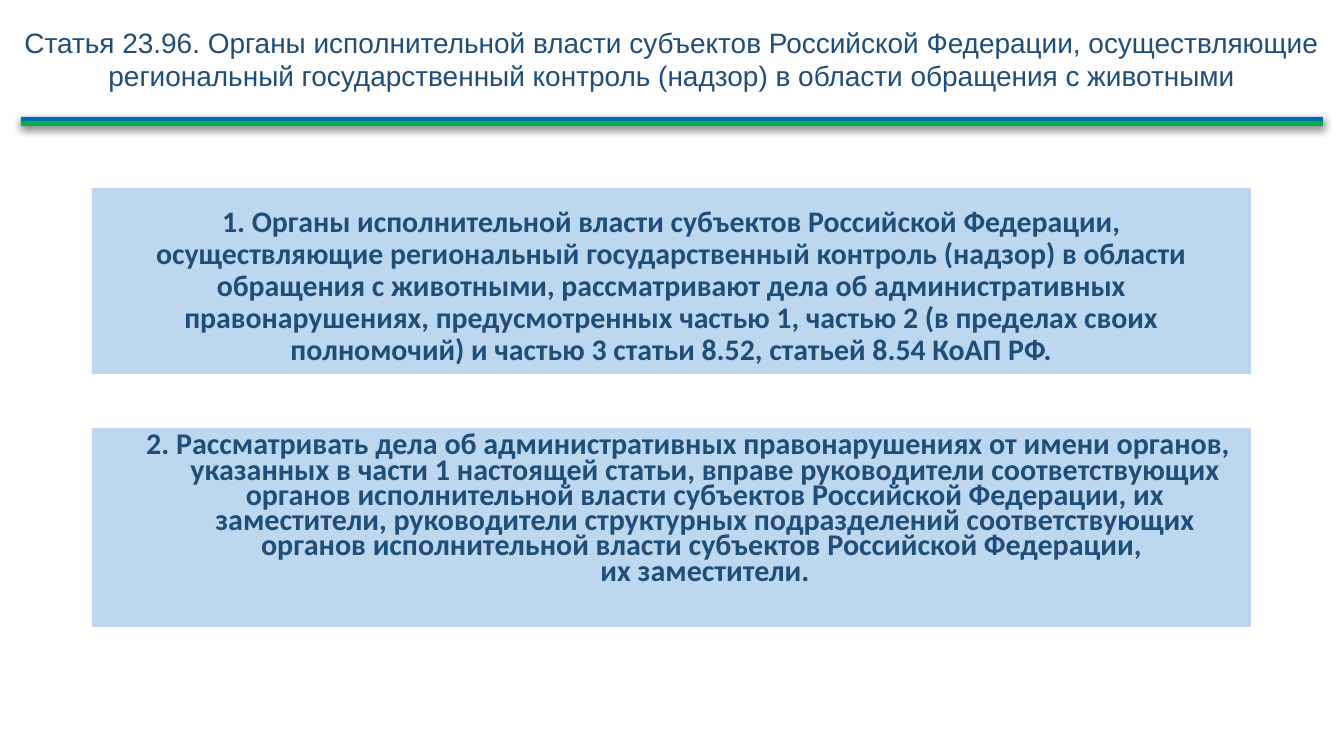
from lxml.etree import SubElement
from pptx import Presentation
from pptx.dml.color import RGBColor
from pptx.enum.shapes import MSO_SHAPE
from pptx.enum.text import MSO_ANCHOR, PP_ALIGN
from pptx.oxml.ns import qn
from pptx.util import Pt

EMU_PER_PX = 914400 / 134.4
NAVY = RGBColor(0x1F, 0x4E, 0x79)
PALE_BLUE = RGBColor(0xBD, 0xD7, 0xEE)
BLUE = RGBColor(0x00, 0x70, 0xC0)
GREEN = RGBColor(0x00, 0xB0, 0x50)

HEADING = (
    "Статья 23.96. Органы исполнительной власти субъектов Российской Федерации, "
    "осуществляющие региональный государственный контроль (надзор) "
    "в области обращения с животными"
)
AUTHORITIES = (
    "1. Органы исполнительной власти субъектов Российской Федерации, "
    "осуществляющие региональный государственный контроль (надзор) в области "
    "обращения с животными, рассматривают дела об административных "
    "правонарушениях, предусмотренных частью 1, частью 2 (в пределах своих "
    "полномочий) и частью 3 статьи 8.52, статьей 8.54 КоАП РФ."
)
OFFICIALS = (
    "2. Рассматривать дела об административных правонарушениях от имени органов, "
    "указанных в части 1 настоящей статьи, вправе руководители соответствующих "
    "органов исполнительной власти субъектов Российской Федерации, их "
    "заместители, руководители структурных подразделений соответствующих "
    "органов исполнительной власти субъектов Российской Федерации, \v"
    "их заместители."
)


def px(length):
    """Turn pixels into EMU."""
    return round(length * EMU_PER_PX)


def write(holder, text, *, size, font="Calibri", bold=True, anchor=MSO_ANCHOR.TOP,
          spacing=1.0, before=0, margin=0, indent=0):
    """Fill a shape with one centred navy paragraph."""
    frame = holder.text_frame
    frame.word_wrap = True
    frame.vertical_anchor = anchor
    paragraph = frame.paragraphs[0]
    paragraph.text = text
    paragraph.alignment = PP_ALIGN.CENTER
    paragraph.line_spacing = spacing
    paragraph.space_before = Pt(before)
    properties = paragraph._p.get_or_add_pPr()
    properties.set("marL", str(px(margin)))
    properties.set("indent", str(px(indent)))
    for run in paragraph.runs:
        run.font.size = Pt(size)
        run.font.name = font
        run.font.bold = bold
        run.font.color.rgb = NAVY


def add_block(shapes, left, top, width, height, color):
    """Add a plain filled rectangle."""
    block = shapes.add_shape(MSO_SHAPE.RECTANGLE, px(left), px(top), px(width), px(height))
    block.shadow.inherit = False
    block.fill.solid()
    block.fill.fore_color.rgb = color
    block.line.fill.background()
    return block


def cast_shadow(block):
    """Give a block a soft shadow straight below it."""
    effects = block._element.spPr.find(qn("a:effectLst"))
    shadow = SubElement(effects, qn("a:outerShdw"), blurRad=str(Pt(4.5)),
                        dist=str(Pt(1.5)), dir="5400000", rotWithShape="0")
    shade = SubElement(shadow, qn("a:srgbClr"), val="000000")
    SubElement(shade, qn("a:alpha"), val="61000")


def add_divider(slide):
    """Add the grouped two-colour rule under the heading."""
    divider = slide.shapes.add_group_shape()
    for top, color in ((117, BLUE), (121, GREEN)):
        cast_shadow(add_block(divider.shapes, 21, top, 1302, 5, color))


def main():
    """Build the slide and save it."""
    deck = Presentation()
    deck.slide_width, deck.slide_height = px(1344), px(756)
    slide = deck.slides.add_slide(deck.slide_layouts[6])

    heading = slide.shapes.add_textbox(0, 0, px(1344), px(118))
    write(heading, HEADING, size=15, font="Arial", bold=False, anchor=MSO_ANCHOR.MIDDLE)
    add_divider(slide)

    authorities = add_block(slide.shapes, 92, 188, 1159, 186, PALE_BLUE)
    write(authorities, AUTHORITIES, size=16, anchor=MSO_ANCHOR.BOTTOM, spacing=0.9)
    officials = add_block(slide.shapes, 92, 428, 1159, 199, PALE_BLUE)
    write(officials, OFFICIALS, size=16.1, spacing=0.7, before=10, margin=67, indent=-34)

    deck.save("out.pptx")


if __name__ == "__main__":
    main()
